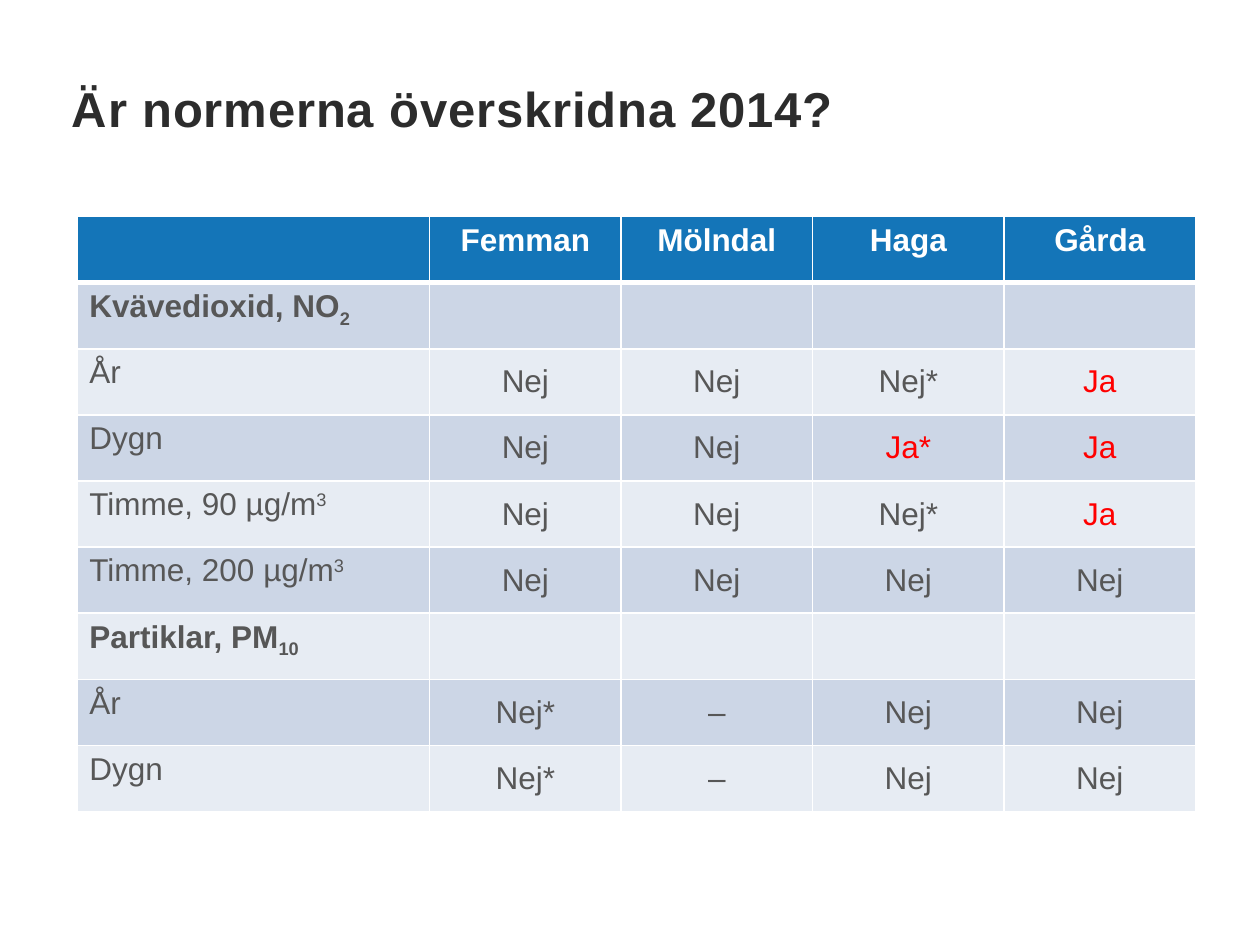
from lxml import etree
from pptx import Presentation
from pptx.dml.color import RGBColor
from pptx.enum.text import MSO_ANCHOR, PP_ALIGN
from pptx.oxml.ns import qn
from pptx.util import Inches, Pt

TITLE_ONLY = 5
MIDDLE, TOP = MSO_ANCHOR.MIDDLE, MSO_ANCHOR.TOP
LEFT, CENTER = PP_ALIGN.LEFT, PP_ALIGN.CENTER

FONT = "Arial"
WHITE, DARK, GRAY, RED = "FFFFFF", "2C2C2C", "575757", "FF0000"
HEADER_FILL = "1475B8"
BAND_FILLS = ("CCD6E6", "E7ECF3")
SUBSCRIPT, SUPERSCRIPT = -25000, 30000

STATIONS = ["Femman", "Mölndal", "Haga", "Gårda"]

# Label, raised or lowered suffix, its baseline, and one answer per station
ROWS = [
    ("Kvävedioxid, NO", "2", SUBSCRIPT, []),
    ("År", "", 0, ["Nej", "Nej", "Nej*", "Ja"]),
    ("Dygn", "", 0, ["Nej", "Nej", "Ja*", "Ja"]),
    ("Timme, 90 µg/m", "3", SUPERSCRIPT, ["Nej", "Nej", "Nej*", "Ja"]),
    ("Timme, 200 µg/m", "3", SUPERSCRIPT, ["Nej", "Nej", "Nej", "Nej"]),
    ("Partiklar, PM", "10", SUBSCRIPT, []),
    ("År", "", 0, ["Nej*", "–", "Nej", "Nej"]),
    ("Dygn", "", 0, ["Nej*", "–", "Nej", "Nej"]),
]


def color(value):
    return RGBColor.from_string(value)


def set_font(paragraph, size, font_color, bold=False):
    font = paragraph.font
    font.name, font.size, font.bold = FONT, Pt(size), bold
    font.color.rgb = color(font_color)


def add_title(slide, text):
    title = slide.shapes.title
    title.left, title.top = Inches(0.57), Inches(0.52)
    title.width, title.height = Inches(7.37), Inches(0.76)
    frame = title.text_frame
    frame.margin_left = frame.margin_right = 0
    frame.margin_top = frame.margin_bottom = 0
    frame.vertical_anchor = MIDDLE
    frame.word_wrap = True
    paragraph = frame.paragraphs[0]
    paragraph.alignment = LEFT
    paragraph.line_spacing = Pt(27)
    run = paragraph.add_run()
    run.text = text
    set_font(paragraph, 28, DARK, bold=True)
    run.font._element.set("spc", "50")  # letter spacing of 0.5 pt


def set_borders(cell, top, bottom):
    properties = cell._tc.get_or_add_tcPr()
    for side, width in (("L", 1), ("R", 1), ("T", top), ("B", bottom)):
        line = etree.SubElement(properties, qn(f"a:ln{side}"), w=str(Pt(width)))
        fill = etree.SubElement(line, qn("a:solidFill"))
        etree.SubElement(fill, qn("a:srgbClr"), val=WHITE)


def style_cell(cell, row):
    """Draw borders and fill; the rule under the header is thicker."""
    set_borders(cell, top=3 if row == 1 else 1, bottom=3 if row == 0 else 1)
    cell.fill.solid()
    fill = HEADER_FILL if row == 0 else BAND_FILLS[(row - 1) % 2]
    cell.fill.fore_color.rgb = color(fill)


def write_cell(cell, text, font_color, bold=False, align=CENTER, anchor=TOP):
    cell.vertical_anchor = anchor
    paragraph = cell.text_frame.paragraphs[0]
    paragraph.alignment = align
    paragraph.add_run().text = text
    set_font(paragraph, 18, font_color, bold)
    return paragraph


def write_label(cell, text, suffix, baseline, bold):
    paragraph = write_cell(cell, text, GRAY, bold, align=LEFT)
    if suffix:
        run = paragraph.add_run()
        run.text = suffix
        run.font._element.set("baseline", str(baseline))


def add_norm_table(slide):
    table = slide.shapes.add_table(
        len(ROWS) + 1, len(STATIONS) + 1,
        Inches(0.61), Inches(1.72), Inches(8.88), Inches(4.72)).table
    for index, column in enumerate(table.columns):
        column.width = Inches(2.8 if index == 0 else 1.52)
    for row_index, row in enumerate(table.rows):
        for cell in row.cells:
            style_cell(cell, row_index)

    # Header row
    for column, station in enumerate(STATIONS, 1):
        write_cell(table.cell(0, column), station, WHITE, bold=True)

    # Section rows have no answers and a bold label
    for row, (label, suffix, baseline, answers) in enumerate(ROWS, 1):
        write_label(table.cell(row, 0), label, suffix, baseline, not answers)
        for column, answer in enumerate(answers, 1):
            answer_color = RED if answer.startswith("Ja") else GRAY
            write_cell(table.cell(row, column), answer, answer_color,
                       anchor=MIDDLE)


def main():
    presentation = Presentation()
    presentation.slide_width = Inches(10)
    presentation.slide_height = Inches(7.5)
    slide = presentation.slides.add_slide(presentation.slide_layouts[TITLE_ONLY])
    add_title(slide, "Är normerna överskridna 2014?")
    add_norm_table(slide)
    presentation.save("out.pptx")


if __name__ == "__main__":
    main()
